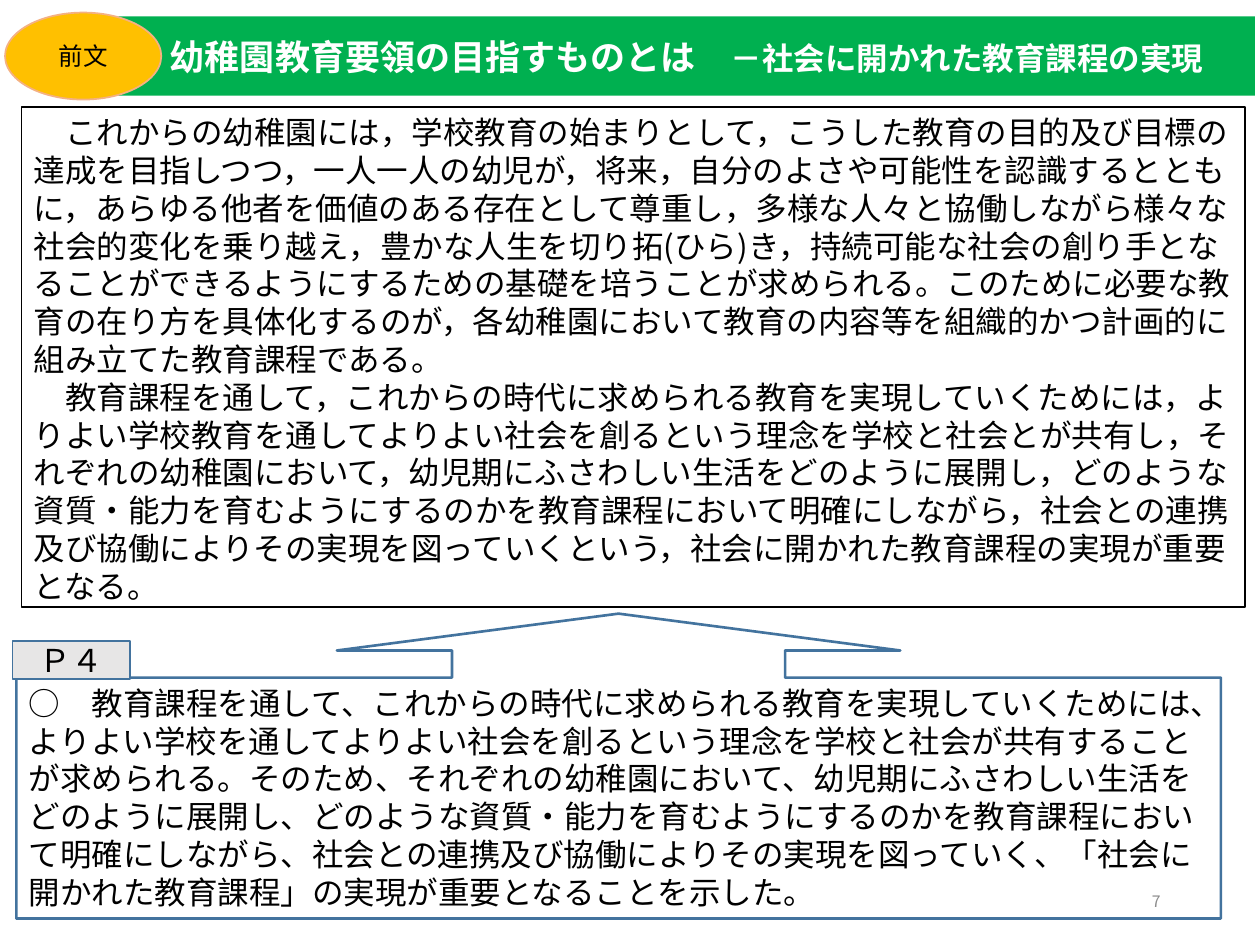
from lxml.etree import SubElement
from pptx import Presentation
from pptx.dml.color import RGBColor
from pptx.enum.shapes import MSO_SHAPE
from pptx.enum.text import MSO_ANCHOR, MSO_AUTO_SIZE, PP_ALIGN
from pptx.oxml.ns import qn
from pptx.util import Inches, Pt

FONT = "Noto Sans CJK JP"
COLORS = {
    "black": "000000",
    "white": "FFFFFF",
    "green": "00B050",
    "amber": "FFC000",
    "peach": "F4B183",
    "blue": "43739E",
    "light_gray": "E7E6E6",
    "number_gray": "8C8C8C",
}
TITLE = [("幼稚園教育要領の目指すものとは　", 20), ("－社会に開かれた教育課程の実現", 18)]
PREAMBLE = [
    "　これからの幼稚園には，学校教育の始まりとして，こうした教育の目的及び目標の達成を目指しつつ，"
    "一人一人の幼児が，将来，自分のよさや可能性を認識するとともに，あらゆる他者を価値のある存在として尊重し，"
    "多様な人々と協働しながら様々な社会的変化を乗り越え，豊かな人生を切り拓(ひら)き，"
    "持続可能な社会の創り手となることができるようにするための基礎を培うことが求められる。"
    "このために必要な教育の在り方を具体化するのが，各幼稚園において教育の内容等を組織的かつ計画的に"
    "組み立てた教育課程である。",
    "　教育課程を通して，これからの時代に求められる教育を実現していくためには，"
    "よりよい学校教育を通してよりよい社会を創るという理念を学校と社会とが共有し，"
    "それぞれの幼稚園において，幼児期にふさわしい生活をどのように展開し，"
    "どのような資質・能力を育むようにするのかを教育課程において明確にしながら，"
    "社会との連携及び協働によりその実現を図っていくという，社会に開かれた教育課程の実現が重要となる。",
]
EXPLANATION = [
    "○　教育課程を通して、これからの時代に求められる教育を実現していくためには、"
    "よりよい学校を通してよりよい社会を創るという理念を学校と社会が共有することが求められる。"
    "そのため、それぞれの幼稚園において、幼児期にふさわしい生活をどのように展開し、"
    "どのような資質・能力を育むようにするのかを教育課程において明確にしながら、"
    "社会との連携及び協働によりその実現を図っていく、「社会に開かれた教育課程」の"
    "実現が重要となることを示した。",
]


def color(name):
    return RGBColor.from_string(COLORS[name])


def add_run(paragraph, text, size, ink="black", bold=False):
    run = paragraph.add_run()
    run.text = text
    run.font.size = Pt(size)
    run.font.bold = bold
    run.font.color.rgb = color(ink)
    run.font.name = FONT
    SubElement(run.font._element, qn("a:ea"), typeface=FONT)


def add_panel(slide, kind, box, fill=None, line=None, line_width=1):
    panel = slide.shapes.add_shape(kind, *map(Inches, box))
    panel.shadow.inherit = False
    if fill:
        panel.fill.solid()
        panel.fill.fore_color.rgb = color(fill)
    else:
        panel.fill.background()
    panel.line.color.rgb = color(line)
    panel.line.width = Pt(line_width)
    return panel


def write_label(shape, runs, ink="black", align=PP_ALIGN.CENTER, bold=False):
    """Put one vertically centred line into the shape."""
    frame = shape.text_frame
    frame.word_wrap = True
    frame.auto_size = MSO_AUTO_SIZE.NONE
    frame.vertical_anchor = MSO_ANCHOR.MIDDLE
    paragraph = frame.paragraphs[0]
    paragraph.alignment = align
    for text, size in runs:
        add_run(paragraph, text, size, ink, bold)


def write_body(shape, texts):
    """Fill the shape from the top with tightly set paragraphs."""
    frame = shape.text_frame
    frame.word_wrap = True
    frame.vertical_anchor = MSO_ANCHOR.TOP
    for index, text in enumerate(texts):
        paragraph = frame.add_paragraph() if index else frame.paragraphs[0]
        paragraph.alignment = PP_ALIGN.LEFT
        paragraph.line_spacing = Pt(21.6)
        add_run(paragraph, text, 18)


def add_header(slide, left, top, width, height):
    title = slide.shapes.title
    title.left, title.top = Inches(left + 0.9), Inches(top + 0.03)
    title.width, title.height = Inches(width - 0.9), Inches(height - 0.06)
    title.fill.solid()
    title.fill.fore_color.rgb = color("green")
    write_label(title, TITLE, "white", bold=True)

    badge = add_panel(slide, MSO_SHAPE.OVAL, (left, top, 1.24, height), "amber", "peach")
    write_label(badge, [("前文", 14)])


def add_preamble(slide, *box):
    write_body(add_panel(slide, MSO_SHAPE.RECTANGLE, box, line="black"), PREAMBLE)


def add_explanation(slide, left, top, width, height):
    callout = add_panel(slide, MSO_SHAPE.UP_ARROW_CALLOUT,
                        (left, top, width, height), line="blue", line_width=1.5)
    for index, value in enumerate((1.092, 0.924, 0.121, 0.79)):
        callout.adjustments[index] = value
    write_body(callout, EXPLANATION)

    page_tag = add_panel(slide, MSO_SHAPE.RECTANGLE,
                         (left - 0.03, top + 0.22, 0.93, 0.3), "light_gray", "blue")
    write_label(page_tag, [("Ｐ４", 18)])


def add_slide_number(slide, *box):
    number = slide.shapes.add_textbox(*map(Inches, box))
    write_label(number, [("7", 9)], "number_gray", PP_ALIGN.RIGHT)


def main():
    presentation = Presentation()
    presentation.slide_width = Inches(10)
    presentation.slide_height = Inches(7.5)
    slide = presentation.slides.add_slide(presentation.slide_layouts[5])
    add_preamble(slide, 0.17, 0.85, 9.71, 3.97)
    add_slide_number(slide, 7.06, 6.95, 2.25, 0.4)
    add_header(slide, 0.04, 0.1, 9.92, 0.69)
    add_explanation(slide, 0.13, 4.87, 9.56, 2.42)
    presentation.save("out.pptx")


if __name__ == "__main__":
    main()
